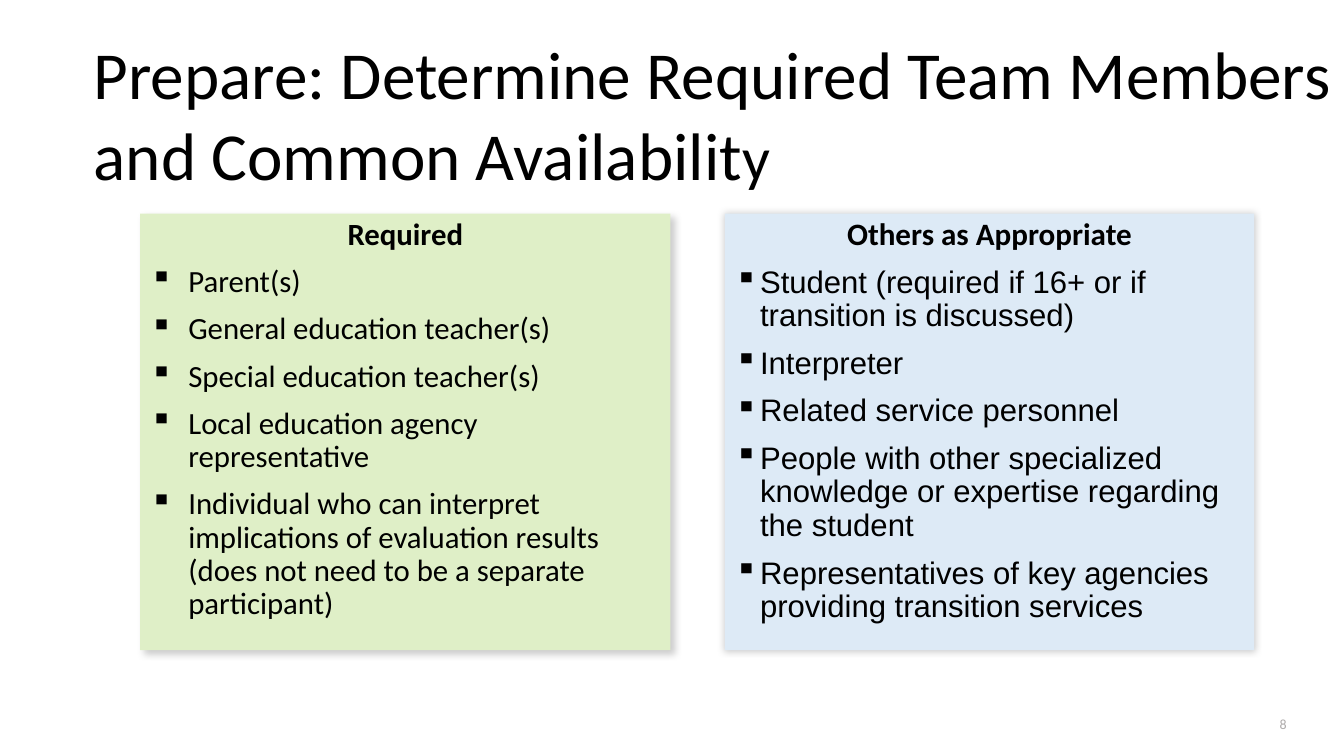
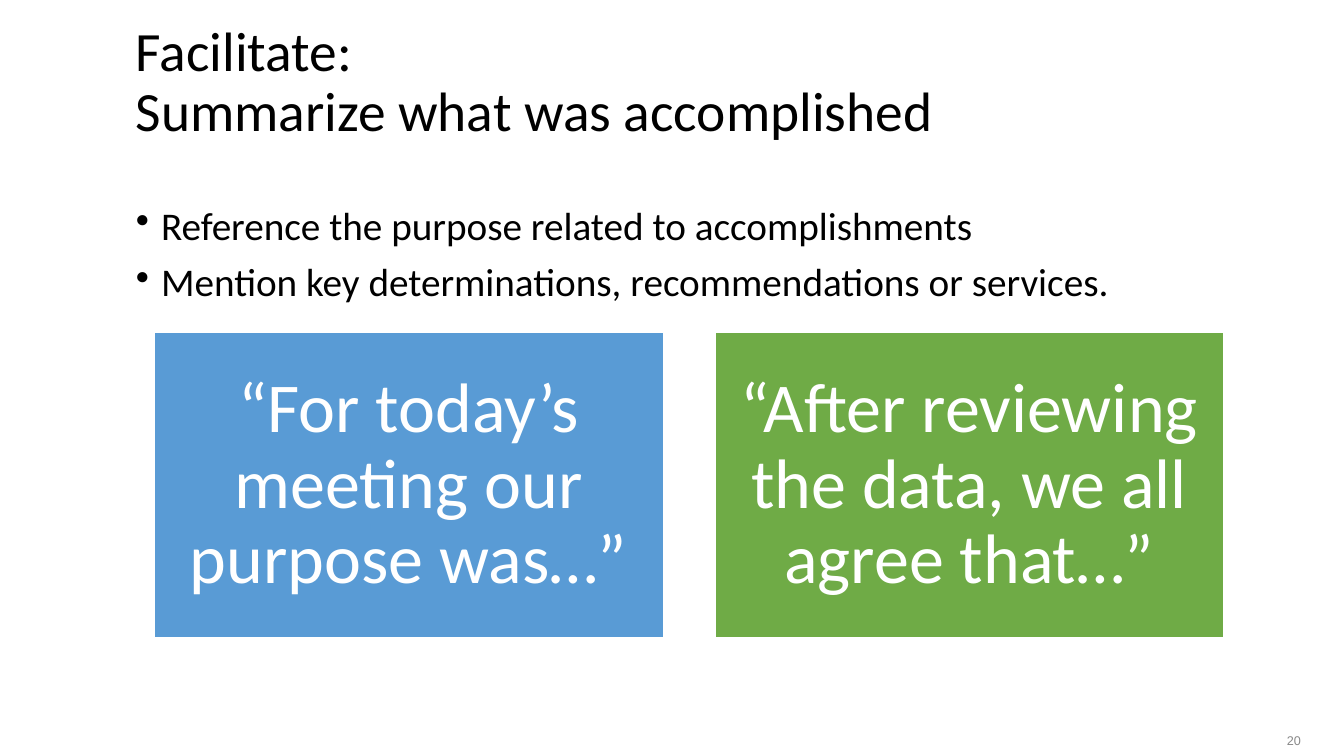
from pptx import Presentation
from pptx.dml.color import RGBColor
from pptx.enum.shapes import MSO_SHAPE as Shape
from pptx.enum.text import MSO_ANCHOR as Anchor, PP_ALIGN as Align
from pptx.oxml import parse_xml
from pptx.oxml.ns import nsdecls
from pptx.util import Inches, Pt

BLACK = RGBColor(0x00, 0x00, 0x00)
WHITE = RGBColor(0xFF, 0xFF, 0xFF)
LIME = RGBColor(0xDF, 0xEF, 0xC7)
SKY = RGBColor(0xDD, 0xEA, 0xF6)
BLUE = RGBColor(0x59, 0x9B, 0xD5)
GREEN = RGBColor(0x6F, 0xAB, 0x46)
SILVER = RGBColor(0xAE, 0xAB, 0xAB)
GRAY = RGBColor(0x88, 0x88, 0x88)

NEEDS = [
    "Parent(s)",
    "General education teacher(s)",
    "Special education teacher(s)",
    "Local education agency representative",
    "Individual who can interpret implications of evaluation results "
    "(does not need to be a separate participant)",
]
OTHERS = [
    "Student (required if 16+ or if transition is discussed)",
    "Interpreter",
    "Related service personnel",
    "People with other specialized knowledge or expertise regarding the student",
    "Representatives of key agencies providing transition services",
]
STEPS = [
    "Reference the purpose related to accomplishments",
    "Mention key determinations, recommendations or services.",
]
QUOTES = [
    ("“For today’s meeting our purpose was…”", BLUE),
    ("“After reviewing the data, we all agree that…”", GREEN),
]


class Deck:
    FONT = "Calibri"
    TIGHT = 0.9

    def __init__(self):
        self.prs = Presentation()
        self.prs.slide_width = Inches(13.33)
        self.prs.slide_height = Inches(7.5)
        self.slide = None

    def page(self):
        self.slide = self.prs.slides.add_slide(self.prs.slide_layouts[6])

    def style(self, para, size, color=BLACK, font=FONT, bold=False,
              align=Align.LEFT, lead=TIGHT):
        para.alignment = align
        para.line_spacing = lead
        for run in para.runs:
            run.font.size = Pt(size)
            run.font.name = font
            run.font.bold = bold
            run.font.color.rgb = color

    def box(self, at, anchor=Anchor.TOP):
        """Add a wrapping text box and return its text frame."""
        frame = self.slide.shapes.add_textbox(*map(Inches, at)).text_frame
        frame.word_wrap = True
        frame.vertical_anchor = anchor
        return frame

    def rect(self, at, fill, anchor=Anchor.TOP):
        shape = self.slide.shapes.add_shape(Shape.RECTANGLE, *map(Inches, at))
        shape.shadow.inherit = False
        shape.fill.solid()
        shape.fill.fore_color.rgb = fill
        shape.line.fill.background()
        shape.text_frame.word_wrap = True
        shape.text_frame.vertical_anchor = anchor
        return shape

    def title(self, lines, at, size, lead=TIGHT):
        frame = self.box(at, Anchor.MIDDLE)
        frame.text = "\n".join(lines)
        for para in frame.paragraphs:
            self.style(para, size, lead=lead)

    def number(self, text, at, size, color, font=FONT, anchor=Anchor.MIDDLE):
        frame = self.box(at, anchor)
        frame.text = text
        self.style(frame.paragraphs[0], size, color, font, align=Align.RIGHT)

    def bullets(self, paras, mark, indent, size, font=FONT):
        for para in paras:
            self.style(para, size, font=font)
            props = para._p.get_or_add_pPr()
            props.set("marL", str(Inches(indent)))
            props.set("indent", str(-Inches(indent)))
            props.append(parse_xml(f'<a:buChar {nsdecls("a")} char="{mark}"/>'))
        for para in paras[1:]:
            para.space_before = Pt(10)

    def shade(self, shape, dist):
        """Give the shape a soft shadow, moved down and right by dist points."""
        shape._element.spPr.find(".//{*}effectLst").append(parse_xml(
            f'<a:outerShdw {nsdecls("a")} blurRad="{Pt(5)}" dist="{Pt(dist)}" '
            'dir="2700000" algn="tl" rotWithShape="0"><a:srgbClr val="000000">'
            '<a:alpha val="20000"/></a:srgbClr></a:outerShdw>'))

    def card(self, head, items, at, fill, size, indent, font=FONT, dist=0):
        shape = self.rect(at, fill)
        self.shade(shape, dist)
        frame = shape.text_frame
        frame.text = "\n".join([head, *items])
        first, *rest = frame.paragraphs
        self.style(first, size, bold=True, align=Align.CENTER)
        self.bullets(rest, "▪", indent, size, font)
        rest[0].space_before = Pt(10)

    def list(self, items, at, size):
        frame = self.box(at)
        frame.text = "\n".join(items)
        self.bullets(frame.paragraphs, "•", 0.25, size)

    def quote(self, text, at, fill):
        shape = self.rect(at, fill, Anchor.MIDDLE)
        shape.line.color.rgb = WHITE
        shape.line.width = Pt(1)
        frame = shape.text_frame
        frame.margin_left = frame.margin_right = Inches(0.21)
        frame.margin_top = frame.margin_bottom = Inches(0.21)
        frame.text = text
        self.style(frame.paragraphs[0], 50, WHITE, align=Align.CENTER)


def team(deck):
    deck.page()
    deck.title(["Prepare: Determine Required Team Members and Common Availability"],
               (0.83, 0.12, 12.5, 2), 48, lead=1)
    # The last letter of the title is a little smaller.
    para = deck.slide.shapes[0].text_frame.paragraphs[0]
    para.runs[0].text = para.text[:-1]
    para.add_run().text = "y"
    deck.style(para, 48, lead=1)
    para.runs[1].font.size = Pt(44)
    deck.card("Required", NEEDS, (1.39, 2.12, 5.26, 4.33), LIME, 22, 0.38, dist=4)
    deck.card("Others as Appropriate", OTHERS, (7.19, 2.12, 5.25, 4.33), SKY,
              22.2, 0.25, "Arial")
    deck.number("8", (12.44, 6.99, 0.42, 0.4), 10, SILVER)


def recap(deck):
    deck.page()
    deck.title(["Facilitate:", "Summarize what was accomplished"],
               (1.25, 0.1, 11.16, 1.45), 39.6)
    deck.list(STEPS, (1.25, 2, 11.16, 1.26), 28)
    deck.number("20", (11.72, 7.12, 1.28, 0.35), 9, GRAY, "Arial", Anchor.BOTTOM)
    for i, (text, fill) in enumerate(QUOTES):
        deck.quote(text, (1.53 + i * 5.56, 3.3, 5.05, 3.03), fill)


def main():
    deck = Deck()
    team(deck)
    recap(deck)
    deck.prs.save("out.pptx")


if __name__ == "__main__":
    main()
